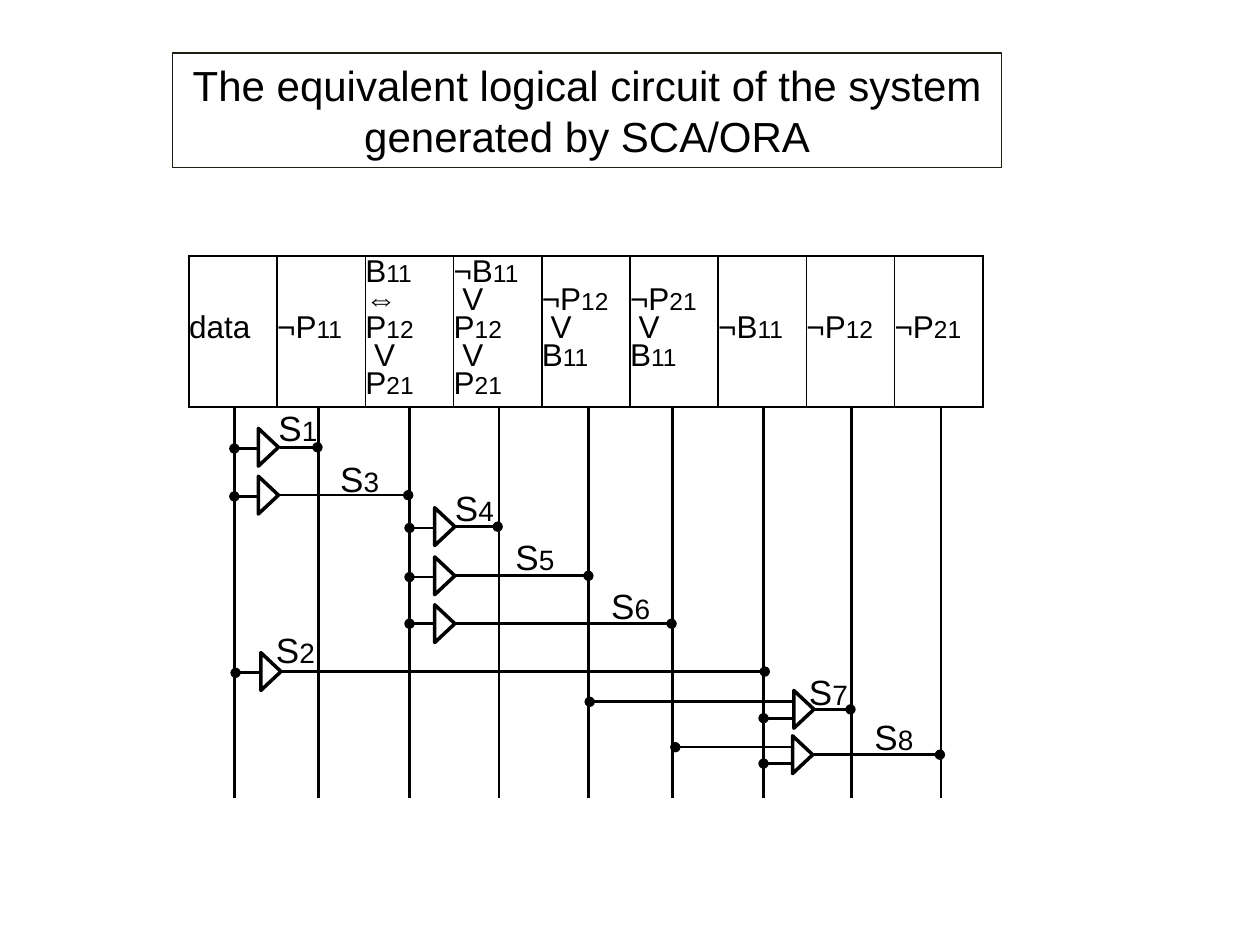
from lxml import etree
from pptx import Presentation
from pptx import util as u
from pptx.dml.color import RGBColor
from pptx.enum import shapes, text
from pptx.oxml import parse_xml
from pptx.oxml.ns import nsdecls, qn

BLACK = "000000"
BUS_TOP, BUS_BOTTOM = 3.23, 6.33
BUSES = [1.86, 2.53, 3.25, 3.96, 4.67, 5.34, 6.06, 6.76, 7.47]
HEADINGS = [
    ["data"],
    ["¬P11"],
    ["B11", "⇔", "P12", " V", "P21"],
    ["¬B11", " V", "P12", " V", "P21"],
    ["¬P12", " V", "B11"],
    ["¬P21", " V", "B11"],
    ["¬B11"],
    ["¬P12"],
    ["¬P21"],
]
GATES = [
    ("S1", 2.13, 3.55, [(1.86, 3.56)], 2.52, (2.21, 3.23)),
    ("S3", 2.13, 3.93, [(1.86, 3.94)], 3.24, (2.7, 3.63)),
    ("S4", 3.53, 4.18, [(3.25, 4.19)], 3.95, (3.61, 3.86)),
    ("S5", 3.53, 4.57, [(3.25, 4.58)], 4.67, (4.09, 4.25)),
    ("S6", 3.53, 4.95, [(3.25, 4.95)], 5.33, (4.85, 4.64)),
    ("S2", 2.15, 5.33, [(1.87, 5.34)], 6.07, (2.19, 4.99)),
    ("S7", 6.38, 5.63, [(4.68, 5.57), (6.06, 5.7)], 6.75, (6.42, 5.32)),
    ("S8", 6.37, 5.99, [(5.36, 5.93), (6.06, 6.06)], 7.46, (6.94, 5.68)),
]


def color(value):
    return RGBColor.from_string(value)


def add_run(p, content, size):
    r = p.add_run()
    r.text = content
    r.font.name = "Arial"
    r.font.size = u.Pt(size)
    r.font.color.rgb = color(BLACK)


def add_symbol(p, symbol, size):
    name = symbol.rstrip("0123456789")
    add_run(p, name, size)
    if name != symbol:
        add_run(p, symbol[len(name):], size - 4)


def set_outline(sp, width, value=BLACK):
    sp.line.color.rgb = color(value)
    sp.line.width = u.Pt(width)


def add_line(parent, x1, y1, x2, y2, dot=False):
    line = parent.shapes.add_connector(
        shapes.MSO_CONNECTOR.STRAIGHT,
        u.Inches(x1), u.Inches(y1), u.Inches(x2), u.Inches(y2))
    set_outline(line, 1.5)
    sppr = line._element.spPr
    if dot:
        etree.SubElement(sppr.find(qn("a:ln")), qn("a:headEnd"), type="oval")
    etree.SubElement(sppr, qn("a:effectLst"))


def add_box(parent, kind, x, y, w, h, width, value=BLACK):
    sp = parent.shapes.add_shape(
        kind, u.Inches(x), u.Inches(y), u.Inches(w), u.Inches(h))
    sp.shadow.inherit = False
    sp.fill.background()
    set_outline(sp, width, value)
    return sp


def add_title(s, content):
    sp = add_box(s, shapes.MSO_SHAPE.RECTANGLE, 1.37, 0.42, 6.58, 0.91, 0.75, "1E1C11")
    tf = sp.text_frame
    tf.word_wrap = True
    tf.auto_size = text.MSO_AUTO_SIZE.SHAPE_TO_FIT_TEXT
    p = tf.paragraphs[0]
    p.alignment = text.PP_ALIGN.CENTER
    add_run(p, content, 24)


def format_cell(cell):
    cell.margin_left = cell.margin_right = cell.margin_top = cell.margin_bottom = 0
    cell.vertical_anchor = text.MSO_ANCHOR.MIDDLE
    tcpr = cell._tc.get_or_add_tcPr()
    for side in ("lnL", "lnR", "lnT", "lnB"):
        tcpr.append(parse_xml(
            f'<a:{side} {nsdecls("a")} w="{u.Pt(1)}"><a:solidFill>'
            f'<a:srgbClr val="{BLACK}"/></a:solidFill></a:{side}>'))
    cell.fill.background()


def add_headings(s):
    table = s.shapes.add_table(
        1, len(HEADINGS), u.Inches(1.5), u.Inches(2.03),
        u.Inches(0.7 * len(HEADINGS)), u.Inches(1.2)).table
    table.first_row = table.horz_banding = False
    for cell, lines in zip(table.rows[0].cells, HEADINGS):
        format_cell(cell)
        tf = cell.text_frame
        for i, line in enumerate(lines):
            p = tf.add_paragraph() if i else tf.paragraphs[0]
            p.line_spacing = u.Pt(16)
            add_symbol(p, line, 18)


def add_gate(s, cx, cy, inputs, out_x):
    grp = s.shapes.add_group_shape()
    for x, y in inputs:
        add_line(grp, x, y, cx - 0.07, y, dot=True)
    w, h = 0.3, 0.16
    sp = add_box(grp, shapes.MSO_SHAPE.ISOSCELES_TRIANGLE,
                 cx - w / 2, cy - h / 2, w, h, 2)
    sp.rotation = 90
    add_line(grp, out_x, cy, cx + 0.09, cy, dot=True)


def add_label(s, name, x, y):
    sp = s.shapes.add_textbox(u.Inches(x), u.Inches(y), u.Inches(0.42), u.Inches(0.34))
    tf = sp.text_frame
    tf.margin_left = tf.margin_right = tf.margin_top = tf.margin_bottom = 0
    tf.word_wrap = True
    tf.auto_size = text.MSO_AUTO_SIZE.SHAPE_TO_FIT_TEXT
    add_symbol(tf.paragraphs[0], name, 20)


def main():
    prs = Presentation()
    prs.slide_width, prs.slide_height = u.Inches(10), u.Inches(7.5)
    s = prs.slides.add_slide(prs.slide_layouts[6])
    add_headings(s)
    for x in BUSES:
        add_line(s, x, BUS_TOP, x, BUS_BOTTOM)
    for _, cx, cy, inputs, out_x, _ in GATES:
        add_gate(s, cx, cy, inputs, out_x)
    for name, *_, (x, y) in GATES:
        add_label(s, name, x, y)
    add_title(s, "The equivalent logical circuit of the system generated by SCA/ORA")
    prs.save("out.pptx")


if __name__ == "__main__":
    main()
